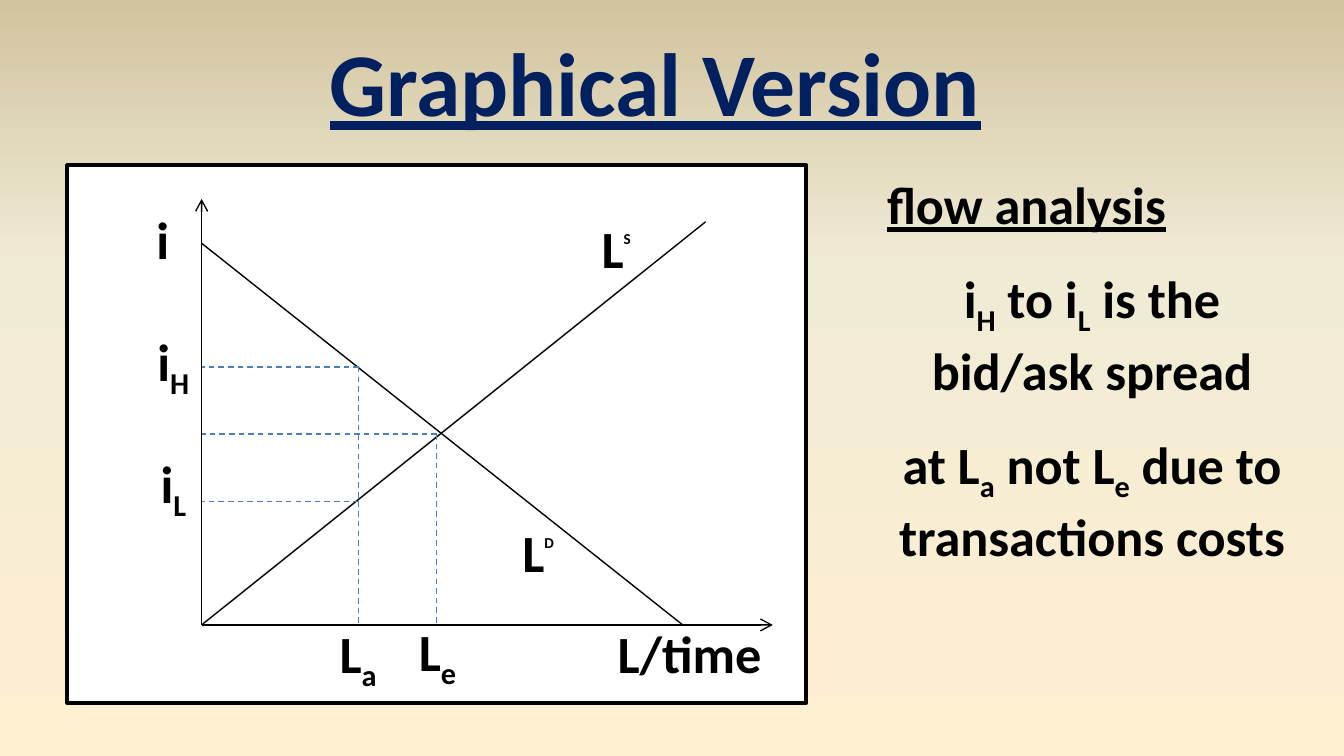
"""Build a slide with a loan supply and demand diagram and its flow analysis."""
from pptx import Presentation
from pptx.dml.color import RGBColor
from pptx.enum.dml import MSO_LINE
from pptx.enum.shapes import MSO_CONNECTOR, MSO_SHAPE
from pptx.enum.text import MSO_ANCHOR, MSO_AUTO_SIZE, PP_ALIGN
from pptx.oxml import parse_xml
from pptx.oxml.ns import nsdecls, qn
from pptx.util import Inches, Pt

CENTER, LEFT = PP_ALIGN.CENTER, PP_ALIGN.LEFT
TOP = MSO_ANCHOR.TOP
NO_AUTOFIT = MSO_AUTO_SIZE.NONE
STRAIGHT = MSO_CONNECTOR.STRAIGHT
RECTANGLE = MSO_SHAPE.RECTANGLE
DASH = MSO_LINE.DASH

SLIDE_WIDTH = 10
SLIDE_HEIGHT = SLIDE_WIDTH * 9 / 16
FONT = "Calibri"
COLORS = {
    "title": "002060",
    "ink": "000000",
    "panel": "FFFFFF",
    "guide": "4B7EBC",
}
BACKGROUND_STOPS = {0: "FFEFD1", 65: "F0EBD5", 100: "D1C39F"}
SUBSCRIPT, SUPERSCRIPT = -25000, 90000

ORIGIN_X, ORIGIN_Y = 1.5, 4.65
ACTUAL_X, EQUILIBRIUM_X = 2.67, 3.25
HIGH_Y, EQUILIBRIUM_Y, LOW_Y = 2.73, 3.23, 3.73


def rgb(name):
    """Return the named colour."""
    return RGBColor.from_string(COLORS[name])


def set_background(slide):
    """Fill the slide background with a gradient rising from the bottom."""
    stops = "".join(
        f'<a:gs pos="{position * 1000}"><a:srgbClr val="{color}"/></a:gs>'
        for position, color in BACKGROUND_STOPS.items()
    )
    background = parse_xml(
        f'<p:bg {nsdecls("p", "a")}><p:bgPr><a:gradFill rotWithShape="1">'
        f'<a:gsLst>{stops}</a:gsLst><a:lin ang="16200000" scaled="0"/>'
        "</a:gradFill><a:effectLst/></p:bgPr></p:bg>"
    )
    slide.element.cSld.insert(0, background)


def write_text(paragraph, text, size=28, color="ink", underline=False,
               alignment=CENTER, space_before=0, script=SUBSCRIPT, script_size=None):
    """Write bold text in which every second part between bars is a script."""
    paragraph.alignment = alignment
    paragraph.space_before = Pt(space_before)
    for index, part in enumerate(text.split("|")):
        is_script = index % 2 == 1
        run = paragraph.add_run()
        run.text = part
        font = run.font
        font.name = FONT
        font.size = Pt(script_size if is_script and script_size else size)
        font.bold = True
        font.underline = underline
        font.color.rgb = rgb(color)
        if is_script:
            font._element.set("baseline", str(script))


def place(shape, left, top, width, height):
    """Move and size a shape, in inches."""
    shape.left, shape.top = Inches(left), Inches(top)
    shape.width, shape.height = Inches(width), Inches(height)


def add_title(slide, text):
    """Fill the title placeholder."""
    title = slide.shapes.title
    place(title, 2.33, 0.15, 5.09, 0.91)
    frame = title.text_frame
    frame.word_wrap = False
    frame.auto_size = NO_AUTOFIT
    frame.vertical_anchor = TOP
    write_text(frame.paragraphs[0], text, size=48, color="title", underline=True)


def add_analysis(slide, heading, points):
    """Fill the body placeholder with a heading and unbulleted points."""
    body = slide.placeholders[1]
    place(body, 6.5, 1.23, 3.25, 2.93)
    frame = body.text_frame
    frame.auto_size = NO_AUTOFIT
    frame.vertical_anchor = TOP
    write_text(frame.paragraphs[0], heading, underline=True, alignment=LEFT)
    for point in points:
        write_text(frame.add_paragraph(), point, space_before=17)
    for paragraph in frame.paragraphs:
        properties = paragraph._p.get_or_add_pPr()
        properties.set("marL", "0")
        properties.set("indent", "0")
        properties.append(parse_xml(f'<a:buNone {nsdecls("a")}/>'))


def add_panel(shapes):
    """Add the white framed panel behind the diagram."""
    panel = shapes.add_shape(
        RECTANGLE, Inches(0.5), Inches(1.23), Inches(5.5), Inches(4))
    panel.shadow.inherit = False
    panel.fill.solid()
    panel.fill.fore_color.rgb = rgb("panel")
    panel.line.color.rgb = rgb("ink")
    panel.line.width = Pt(2)


def add_line(shapes, start, end, color="ink", dashed=False, arrow=False):
    """Add a thin straight line, optionally dashed or with an arrowhead."""
    connector = shapes.add_connector(STRAIGHT, *map(Inches, start + end))
    connector.line.color.rgb = rgb(color)
    connector.line.width = Pt(0.75)
    if dashed:
        connector.line.dash_style = DASH
    if arrow:
        line = connector._element.spPr.find(qn("a:ln"))
        line.append(parse_xml(f'<a:tailEnd {nsdecls("a")} type="arrow"/>'))
    connector._element.spPr.append(parse_xml(f'<a:effectLst {nsdecls("a")}/>'))


def add_label(shapes, text, left, top, width, **text_format):
    """Add a centred diagram label."""
    label = shapes.add_textbox(
        Inches(left), Inches(top), Inches(width), Inches(0.57))
    label.text_frame.word_wrap = True
    write_text(label.text_frame.paragraphs[0], text, **text_format)


def add_diagram(slide):
    """Add the grouped supply and demand diagram."""
    shapes = slide.shapes.add_group_shape().shapes
    origin = (ORIGIN_X, ORIGIN_Y)
    add_panel(shapes)

    for axis_end in ((ORIGIN_X, 1.48), (5.75, ORIGIN_Y)):
        add_line(shapes, origin, axis_end, arrow=True)
    add_line(shapes, (ORIGIN_X, 1.81), (5.08, ORIGIN_Y))
    add_line(shapes, (5.25, 1.65), origin)

    for x, y in ((ACTUAL_X, HIGH_Y), (ACTUAL_X, LOW_Y), (EQUILIBRIUM_X, EQUILIBRIUM_Y)):
        add_line(shapes, (x, y), (ORIGIN_X, y), color="guide", dashed=True)
    for x, y in ((ACTUAL_X, HIGH_Y), (EQUILIBRIUM_X, EQUILIBRIUM_Y)):
        add_line(shapes, (x, y), (x, ORIGIN_Y), color="guide", dashed=True)

    for text, left, top, width in (
        ("i", 0.92, 1.49, 0.58),
        ("i|H", 1, 2.4, 0.58),
        ("i|L", 1, 3.31, 0.58),
        ("L|a", 2.33, 4.57, 0.67),
        ("L|e", 2.92, 4.56, 0.67),
        ("L/time", 4.42, 4.57, 1.42),
    ):
        add_label(shapes, text, left, top, width)
    for text, left, top in (("L|D", 3.67, 3.82), ("L|S", 4.25, 1.56)):
        add_label(shapes, text, left, top, 0.67, script=SUPERSCRIPT, script_size=14)


def main():
    """Build and save the presentation."""
    presentation = Presentation()
    presentation.slide_width = Inches(SLIDE_WIDTH)
    presentation.slide_height = Inches(SLIDE_HEIGHT)
    slide = presentation.slides.add_slide(presentation.slide_layouts[1])
    set_background(slide)
    add_title(slide, "Graphical Version")
    add_analysis(slide, "flow analysis", (
        "i|H| to i|L| is the bid/ask spread",
        "at L|a| not L|e| due to transactions costs",
    ))
    add_diagram(slide)
    presentation.save("out.pptx")


if __name__ == "__main__":
    main()
